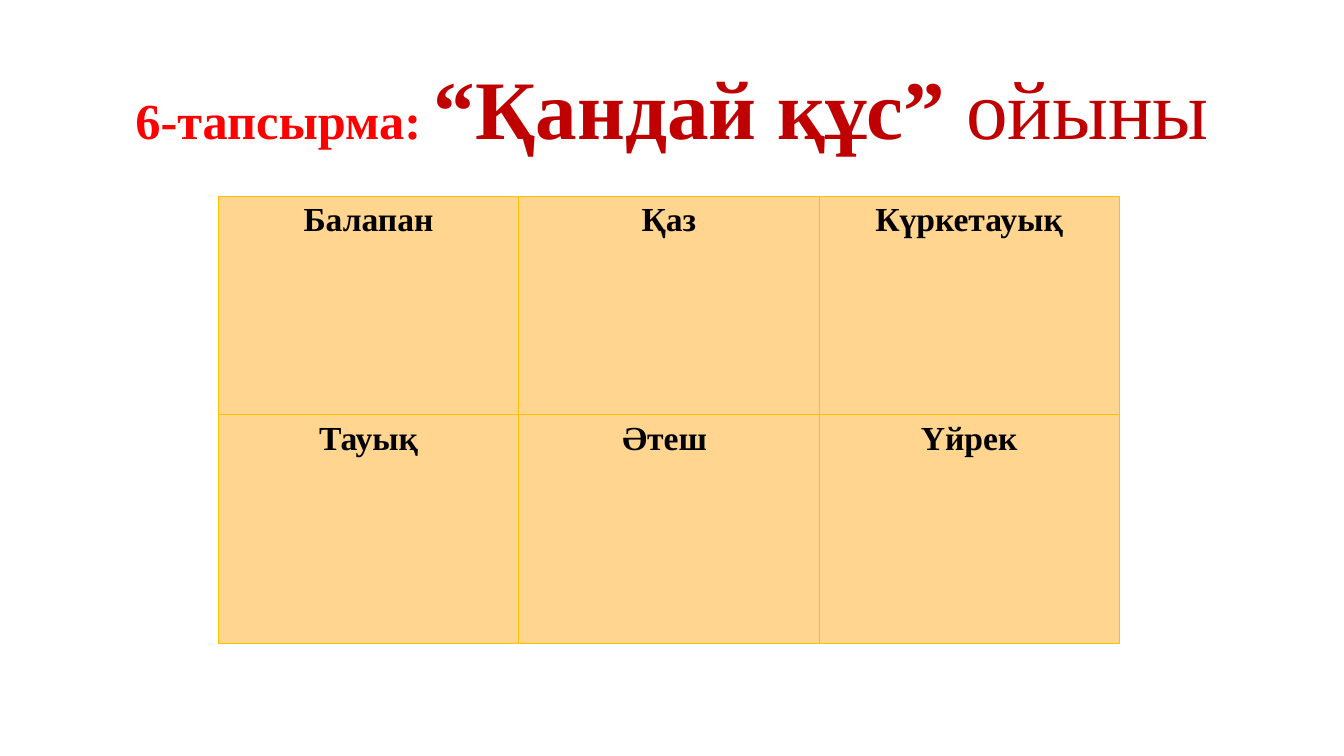
from dataclasses import dataclass

from lxml.etree import SubElement
from pptx import Presentation
from pptx.dml.color import RGBColor
from pptx.enum.text import MSO_ANCHOR, MSO_AUTO_SIZE, PP_ALIGN
from pptx.oxml.ns import qn
from pptx.slide import Slide
from pptx.table import _Cell
from pptx.util import Emu, Pt

PX = 9525
FONT = "Times New Roman"
RED = RGBColor(0xFF, 0x00, 0x00)
DARK_RED = RGBColor(0xC0, 0x00, 0x00)
BLACK = RGBColor(0x00, 0x00, 0x00)
PEACH = RGBColor(0xFF, 0xD5, 0x90)
GOLD = RGBColor(0xFF, 0xC0, 0x00)


@dataclass(frozen=True)
class TitlePart:
    text: str
    size: float
    color: RGBColor
    bold: bool


TITLE_PARTS = [
    TitlePart("6-тапсырма: ", 36, RED, True),
    TitlePart("“Қандай құс” ", 59.4, DARK_RED, True),
    TitlePart("ойыны", 59.4, DARK_RED, False),
]
BIRDS = [
    ["Балапан", "Қаз", "Күркетауық"],
    ["Тауық", "Әтеш ", "Үйрек"],
]
COLUMN_WIDTH = 286
ROW_HEIGHTS = [208, 218]


def px(length: int) -> Emu:
    return Emu(length * PX)


def format_run(run, size: float, color: RGBColor, bold: bool) -> None:
    run.font.name = FONT
    run.font.size = Pt(size)
    run.font.bold = bold
    run.font.color.rgb = color


def write_title(slide: Slide) -> None:
    title = slide.shapes.title
    title.left, title.top, title.width, title.height = map(px, (88, 38, 1104, 139))
    text_frame = title.text_frame
    text_frame.word_wrap = True
    text_frame.auto_size = MSO_AUTO_SIZE.NONE
    text_frame.vertical_anchor = MSO_ANCHOR.MIDDLE
    paragraph = text_frame.paragraphs[0]
    paragraph.alignment = PP_ALIGN.CENTER
    paragraph.line_spacing = 0.9
    for part in TITLE_PARTS:
        run = paragraph.add_run()
        run.text = part.text
        format_run(run, part.size, part.color, part.bold)


def add_borders(cell: _Cell) -> None:
    properties = cell._tc.get_or_add_tcPr()
    for index, side in enumerate(("lnL", "lnR", "lnT", "lnB")):
        line = SubElement(properties, qn(f"a:{side}"), w=str(Pt(0.5)))
        fill = SubElement(line, qn("a:solidFill"))
        SubElement(fill, qn("a:srgbClr"), val=str(GOLD))
        properties.insert(index, line)  # borders must come before the cell fill


def write_cell(cell: _Cell, bird: str) -> None:
    cell.margin_left = cell.margin_right = px(6)
    cell.margin_top = cell.margin_bottom = 0
    cell.fill.solid()
    cell.fill.fore_color.rgb = PEACH
    add_borders(cell)
    paragraph = cell.text_frame.paragraphs[0]
    paragraph.text = bird
    paragraph.alignment = PP_ALIGN.CENTER
    paragraph.line_spacing = 1.15
    format_run(paragraph.runs[0], 24, BLACK, True)


def add_bird_table(slide: Slide) -> None:
    rows, columns = len(BIRDS), len(BIRDS[0])
    table = slide.shapes.add_table(
        rows, columns, px(208), px(187), px(columns * COLUMN_WIDTH), px(sum(ROW_HEIGHTS))
    ).table
    table.first_row = table.horz_banding = False
    for column in table.columns:
        column.width = px(COLUMN_WIDTH)
    for row, height, birds in zip(table.rows, ROW_HEIGHTS, BIRDS):
        row.height = px(height)
        for cell, bird in zip(row.cells, birds):
            write_cell(cell, bird)


def main() -> None:
    presentation = Presentation()
    presentation.slide_width, presentation.slide_height = px(1280), px(720)
    title_only = presentation.slide_layouts.get_by_name("Title Only")
    slide = presentation.slides.add_slide(title_only)
    write_title(slide)
    add_bird_table(slide)
    presentation.save("out.pptx")


if __name__ == "__main__":
    main()
